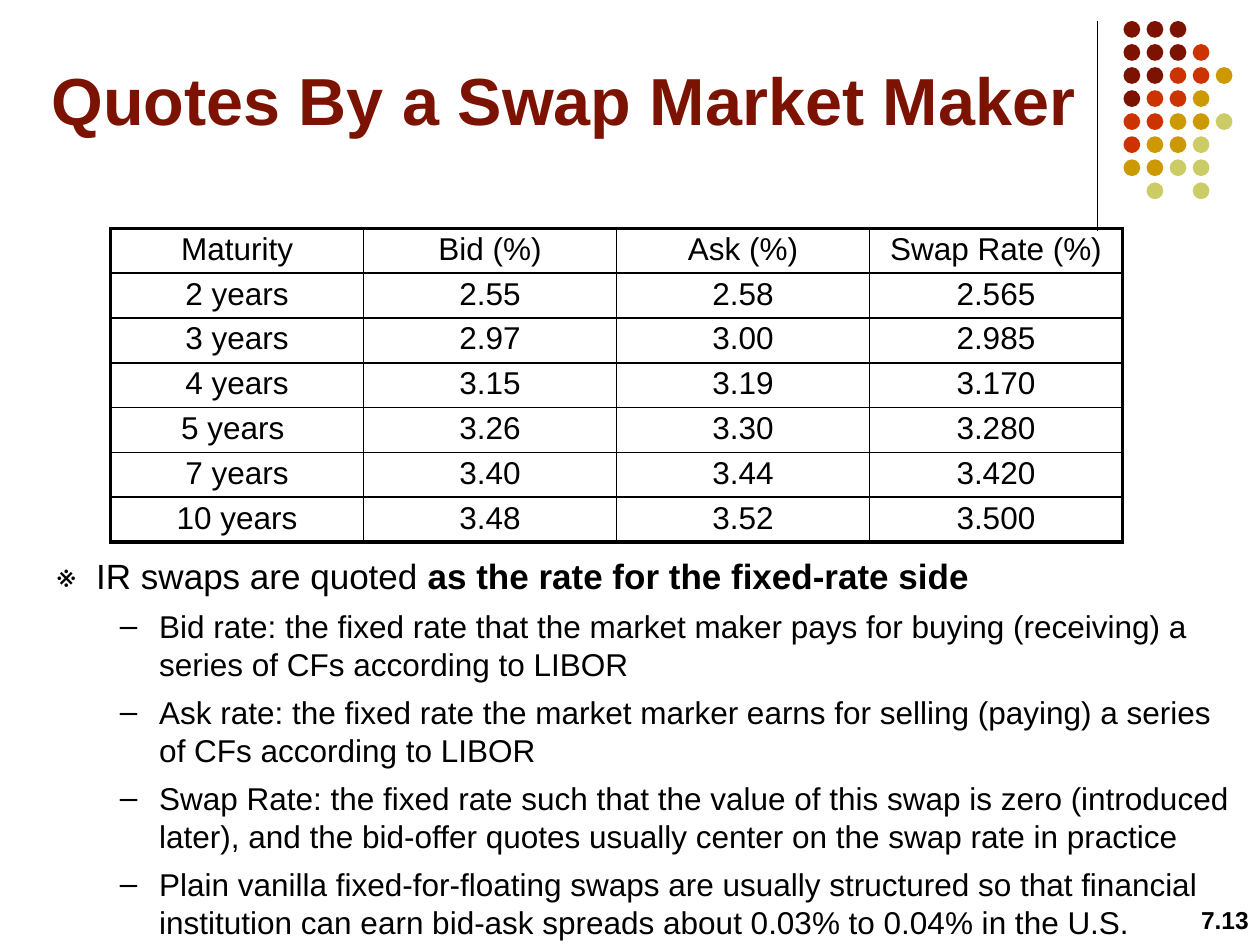
from dataclasses import dataclass

from lxml import etree
from pptx import Presentation
from pptx import util as u
from pptx.dml.color import RGBColor
from pptx.enum import shapes, text
from pptx.oxml import ns


@dataclass(frozen=True)
class Theme:
    font: str = "Arial"
    ink: str = "000000"
    maroon: str = "7C1302"
    red: str = "CC3300"
    gold: str = "CC9900"
    olive: str = "CCCC66"
    title_size: float = 38
    lead_size: float = 20
    body_size: float = 18
    number_size: float = 14
    row_spacing: float = 12
    outer_border: float = 2.25
    inner_border: float = 1
    rule_width: float = 0.75


COLUMNS, ROWS = 100, 75

QUOTES = [
    ["Maturity", "Bid (%)", "Ask (%)", "Swap Rate (%)"],
    ["2 years", "2.55", "2.58", "2.565"],
    ["3 years", "2.97", "3.00", "2.985"],
    ["4 years", "3.15", "3.19", "3.170"],
    ["5 years ", "3.26", "3.30", "3.280"],
    ["7 years", "3.40", "3.44", "3.420"],
    ["10 years", "3.48", "3.52", "3.500"],
]

LEAD = [("IR swaps are quoted ", False), ("as the rate for the fixed-rate side", True)]
DETAILS = [
    "Bid rate: the fixed rate that the market maker pays for buying (receiving) a series "
    "of CFs according to LIBOR",
    "Ask rate: the fixed rate the market marker earns for selling (paying) a series of CFs "
    "according to LIBOR",
    "Swap Rate: the fixed rate such that the value of this swap is zero (introduced later), "
    "and the bid-offer quotes usually center on the swap rate in practice",
    "Plain vanilla fixed-for-floating swaps are usually structured so that financial "
    "institution can earn bid-ask spreads about 0.03% to 0.04% in the U.S.",
]

# One letter per dot: maroon, red, gold, olive; a dot mark leaves the place empty.
DOT_ROWS = ["MMM", "MMMR", "MMRRG", "MRRG", "RRGGO", "RGGO", "GGOO", ".O.O"]


class SlideBuilder:
    """Draws on one slide; positions are counted in grid columns and rows."""

    def __init__(self, deck, theme):
        self.theme = theme
        self.column = deck.slide_width / COLUMNS
        self.row = deck.slide_height / ROWS
        self.slide = deck.slides.add_slide(deck.slide_layouts[6])

    def place(self, left, top, width, height):
        return (round(left * self.column), round(top * self.row),
                round(width * self.column), round(height * self.row))

    def run(self, paragraph, words, size, bold=False, color=None):
        run = paragraph.add_run()
        run.text = words
        run.font.name = self.theme.font
        run.font.size = u.Pt(size)
        run.font.bold = bold
        run.font.color.rgb = RGBColor.from_string(color or self.theme.ink)

    def text_frame(self, *box, anchor=text.MSO_ANCHOR.TOP):
        frame = self.slide.shapes.add_textbox(*self.place(*box)).text_frame
        frame.word_wrap = True
        frame.vertical_anchor = anchor
        return frame

    def rule(self, column, top, bottom):
        x, start, _, length = self.place(column, top, 0, bottom - top)
        line = self.slide.shapes.add_connector(
            shapes.MSO_CONNECTOR.STRAIGHT, x, start, x, start + length)
        line.line.color.rgb = RGBColor.from_string(self.theme.ink)
        line.line.width = u.Pt(self.theme.rule_width)
        etree.SubElement(line._element.spPr, ns.qn("a:effectLst"))

    def dots(self, left, top, pitch, size, pattern):
        colors = {"M": self.theme.maroon, "R": self.theme.red,
                  "G": self.theme.gold, "O": self.theme.olive}
        group = self.slide.shapes.add_group_shape()
        for r, letters in enumerate(pattern):
            for c, letter in enumerate(letters):
                if letter not in colors:
                    continue
                dot = group.shapes.add_shape(
                    shapes.MSO_SHAPE.OVAL,
                    *self.place(left + c * pitch, top + r * pitch, size, size))
                dot.shadow.inherit = False
                dot.fill.solid()
                dot.fill.fore_color.rgb = RGBColor.from_string(colors[letter])
                dot.line.fill.background()

    def borders(self, cell, widths):
        """Put left, right, top and bottom borders, in points, on a cell."""
        properties = cell._tc.get_or_add_tcPr()
        for index, (side, width) in enumerate(zip("LRTB", widths)):
            edge = etree.Element(ns.qn(f"a:ln{side}"), w=str(u.Pt(width)))
            fill = etree.SubElement(edge, ns.qn("a:solidFill"))
            etree.SubElement(fill, ns.qn("a:srgbClr"), val=self.theme.ink)
            properties.insert(index, edge)

    def table(self, left, top, width, height, rows):
        last_row, last_column = len(rows) - 1, len(rows[0]) - 1
        grid = self.slide.shapes.add_table(
            len(rows), len(rows[0]), *self.place(left, top, width, height)).table
        grid.first_row = grid.horz_banding = False
        for r, values in enumerate(rows):
            for c, value in enumerate(values):
                cell = grid.cell(r, c)
                cell.fill.background()
                cell.vertical_anchor = text.MSO_ANCHOR.BOTTOM
                paragraph = cell.text_frame.paragraphs[0]
                paragraph.alignment = text.PP_ALIGN.CENTER
                paragraph.line_spacing = u.Pt(self.theme.row_spacing)
                self.run(paragraph, value, self.theme.body_size)
                on_outside = (c == 0, c == last_column, r == 0, r == last_row)
                self.borders(cell, [
                    self.theme.outer_border if outer else self.theme.inner_border
                    for outer in on_outside])

    def bullet(self, paragraph, mark, level, indent, hanging):
        paragraph.level = level
        paragraph.space_before = u.Pt(6)
        properties = paragraph._p.get_or_add_pPr()
        properties.set("marL", str(round(indent * self.column)))
        properties.set("indent", str(round(-hanging * self.column)))
        etree.SubElement(properties, ns.qn("a:buFont"), typeface=self.theme.font)
        etree.SubElement(properties, ns.qn("a:buChar"), char=mark)

    def title(self, words, *box):
        frame = self.text_frame(*box, anchor=text.MSO_ANCHOR.BOTTOM)
        self.run(frame.paragraphs[0], words, self.theme.title_size, True, self.theme.maroon)

    def page_number(self, words, *box):
        paragraph = self.text_frame(*box).paragraphs[0]
        paragraph.alignment = text.PP_ALIGN.RIGHT
        self.run(paragraph, words, self.theme.number_size, True)

    def outline(self, lead, details, *box):
        frame = self.text_frame(*box)
        heading = frame.paragraphs[0]
        self.bullet(heading, "※", 0, 3.12, 3.12)
        for words, bold in lead:
            self.run(heading, words, self.theme.lead_size, bold)
        for words in details:
            detail = frame.add_paragraph()
            self.bullet(detail, "–", 1, 8.12, 3.12)
            self.run(detail, words, self.theme.body_size)


def main():
    deck = Presentation()
    deck.slide_width, deck.slide_height = u.Inches(10), u.Inches(7.5)
    page = SlideBuilder(deck, Theme())
    page.rule(87.1, 1.7, 18.3)
    page.dots(89.17, 1.67, 1.83, 1.33, DOT_ROWS)
    page.title("Quotes By a Swap Market Maker", 3.1, 3.6, 86.3, 7.9)
    page.table(8.78, 18.13, 80.3, 24.9, QUOTES)
    page.page_number("7.13", 76.8, 71.35, 23.3, 3.6)
    page.outline(LEAD, DETAILS, 3.54, 43.5, 95.3, 32)
    deck.save("out.pptx")


if __name__ == "__main__":
    main()
